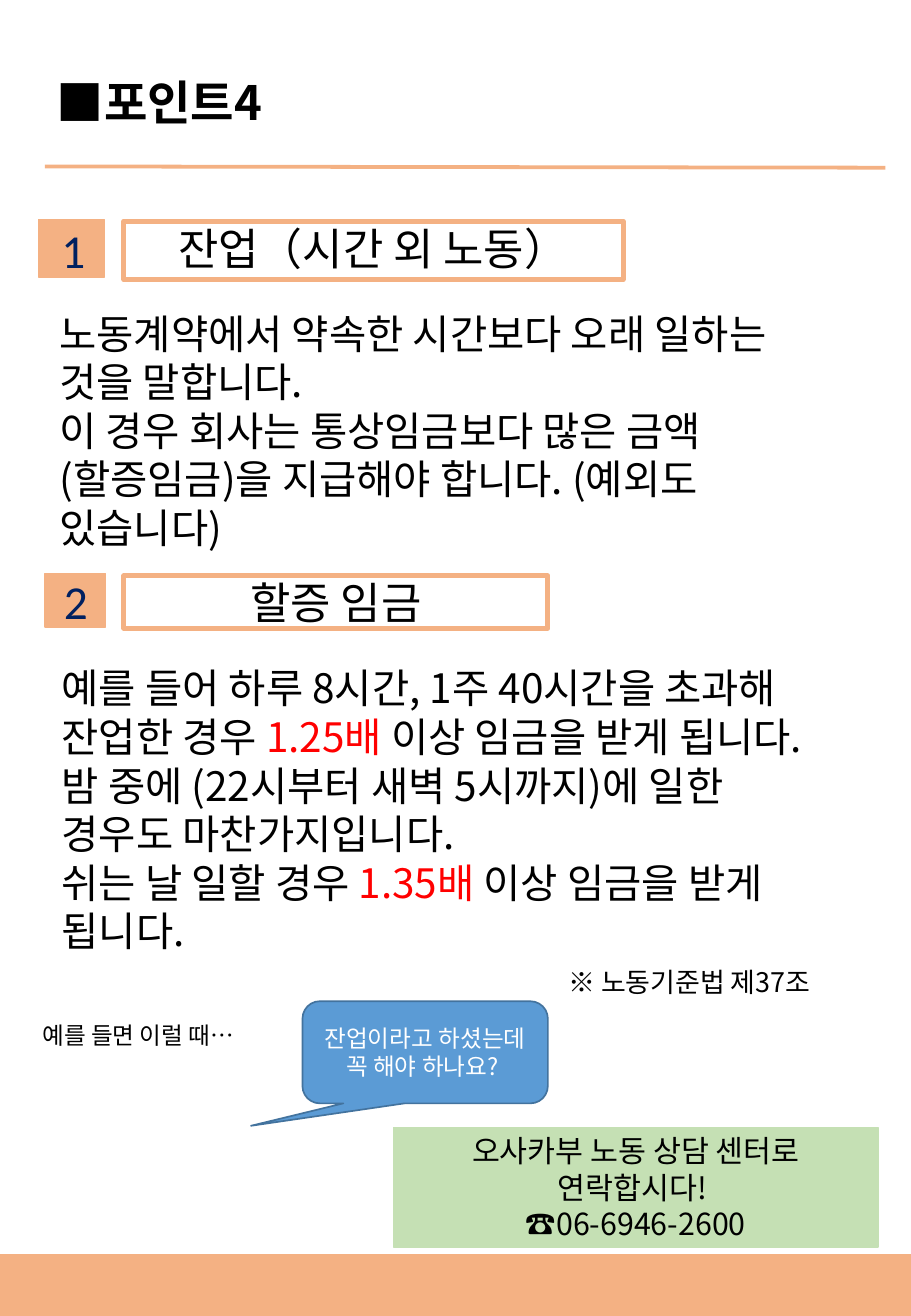
from lxml.etree import SubElement
from pptx import Presentation
from pptx.dml.color import RGBColor
from pptx.enum.shapes import MSO_CONNECTOR, MSO_SHAPE
from pptx.enum.text import MSO_ANCHOR, MSO_AUTO_SIZE, PP_ALIGN
from pptx.oxml.ns import qn
from pptx.util import Inches, Pt

COLORS = {
    "orange": "F4B183", "white": "FFFFFF", "black": "000000", "navy": "002060",
    "red": "FF0000", "blue": "5B9BD5", "blue_line": "43739E", "green": "C5E0B4",
}
KR, JP, LATIN = "Noto Sans CJK KR", "Noto Sans CJK JP", "Calibri"

# A paragraph is a list of runs: (text, colour, font); "\n" is a line break.
TITLE = [[("■", "black", JP), ("포인트4", "black", KR)]]
SECTIONS = [
    # number, its box, badge box, heading, heading box, body box, body
    ("1", (0.37, 1.77, 0.47, 0.57), (0.32, 1.81, 0.54, 0.47),
     "잔업（시간 외 노동）", (1.02, 1.82, 4.11, 0.48), (0.39, 2.49, 6.35, 2.12),
     [[("노동계약에서 약속한 시간보다 오래 일하는 것을 말합니다.\n"
        "이 경우 회사는 통상임금보다 많은 금액(할증임금)을 지급해야 합니다. "
        "(예외도 있습니다)", "black", KR)]]),
    ("2", (0.39, 4.66, 0.47, 0.57), (0.37, 4.72, 0.5, 0.44),
     "할증 임금", (1.02, 4.74, 3.49, 0.43), (0.41, 5.41, 6.35, 2.93),
     [[("예를 들어 하루 8시간, 1주 40시간을 초과해 잔업한 경우 ", "black", KR),
       ("1.25배", "red", KR),
       (" 이상 임금을 받게 됩니다.\n"
        "밤 중에 (22시부터 새벽 5시까지)에 일한 경우도 마찬가지입니다.\n"
        "쉬는 날 일할 경우 ", "black", KR),
       ("1.35배", "red", KR),
       (" 이상 임금을 받게 됩니다.", "black", KR)]]),
]
NOTES = [
    ("예를 들면 이럴 때…", (0.25, 8.35, 2.02, 0.34), 14),
    ("※ 노동기준법 제37조", (4.58, 7.9, 2.47, 0.37), 16),
]
QUESTION = [[("잔업이라고 하셨는데 꼭 해야 하나요? ", "white", KR)]]
CONTACT = [
    [("오사카부 노동 상담 센터로\n연락합시다! ", "black", KR)],
    [("☎06-6946-2600", "black", KR)],
]


def rgb(name):
    return RGBColor.from_string(COLORS[name])


def add_run(p, text, size, color, font, bold):
    r = p.add_run()
    r.text = text
    r.font.size = Pt(size)
    r.font.bold = bold
    r.font.color.rgb = rgb(color)
    r.font.name = font
    SubElement(r.font._element, qn("a:ea")).set("typeface", font)


def write(sp, paragraphs, size, align=PP_ALIGN.LEFT, anchor=MSO_ANCHOR.TOP, bold=False):
    tf = sp.text_frame
    tf.word_wrap = True
    tf.vertical_anchor = anchor
    for i, runs in enumerate(paragraphs):
        p = tf.paragraphs[0] if i == 0 else tf.add_paragraph()
        p.alignment = align
        for text, color, font in runs:
            for j, line in enumerate(text.split("\n")):
                if j:
                    p.add_line_break()
                add_run(p, line, size, color, font, bold)
    return tf


def add_text(s, box, paragraphs, size, **style):
    sp = s.shapes.add_textbox(*map(Inches, box))
    tf = write(sp, paragraphs, size, **style)
    tf.auto_size = MSO_AUTO_SIZE.SHAPE_TO_FIT_TEXT
    return tf


def add_box(s, box, fill, line, width=1, kind=MSO_SHAPE.RECTANGLE):
    sp = s.shapes.add_shape(kind, *map(Inches, box))
    sp.shadow.inherit = False
    sp.fill.solid()
    sp.fill.fore_color.rgb = rgb(fill)
    sp.line.color.rgb = rgb(line)
    sp.line.width = Pt(width)
    return sp


def add_section(s, number, number_box, badge_box, heading, heading_box, body_box, body):
    add_box(s, badge_box, "orange", "orange", 0.75)
    frame = add_box(s, heading_box, "white", "orange", 3)
    tf = write(frame, [[(heading, "black", KR)]], 26, PP_ALIGN.CENTER)
    tf.paragraphs[0].line_spacing = 0.9
    tf.paragraphs[0].space_before = Pt(10)
    tf = add_text(s, number_box, [[(number, "navy", LATIN)]], 28, align=PP_ALIGN.CENTER)
    tf.margin_left = tf.margin_right = Inches(0.03)
    add_text(s, body_box, body, 24)


def main():
    prs = Presentation()
    prs.slide_width, prs.slide_height = Inches(7.5), Inches(10.83)
    s = prs.slides.add_slide(prs.slide_layouts[6])

    rule = s.shapes.add_connector(
        MSO_CONNECTOR.STRAIGHT, *map(Inches, (0.37, 1.37, 7.29, 1.38)))
    rule.line.color.rgb = rgb("orange")
    rule.line.width = Pt(2.25)
    SubElement(rule._element.spPr, qn("a:effectLst"))
    add_text(s, (0.37, 0.55, 4.56, 0.57), TITLE, 28, bold=True)

    for section in SECTIONS:
        add_section(s, *section)

    bubble = add_box(s, (2.49, 8.24, 2.02, 0.84), "blue", "blue_line",
                     kind=MSO_SHAPE.ROUNDED_RECTANGULAR_CALLOUT)
    for i, value in enumerate((-0.71, 0.72, 0.17)):
        bubble.adjustments[i] = value
    write(bubble, QUESTION, 14, PP_ALIGN.CENTER, MSO_ANCHOR.MIDDLE)

    for text, box, size in NOTES:
        add_text(s, box, [[(text, "black", KR)]], size)

    add_box(s, (0, 10.33, 7.5, 0.5), "orange", "orange")
    contact = add_box(s, (3.24, 9.28, 3.99, 0.98), "green", "green")
    write(contact, CONTACT, 18, PP_ALIGN.CENTER, MSO_ANCHOR.MIDDLE)

    prs.save("out.pptx")


if __name__ == "__main__":
    main()
